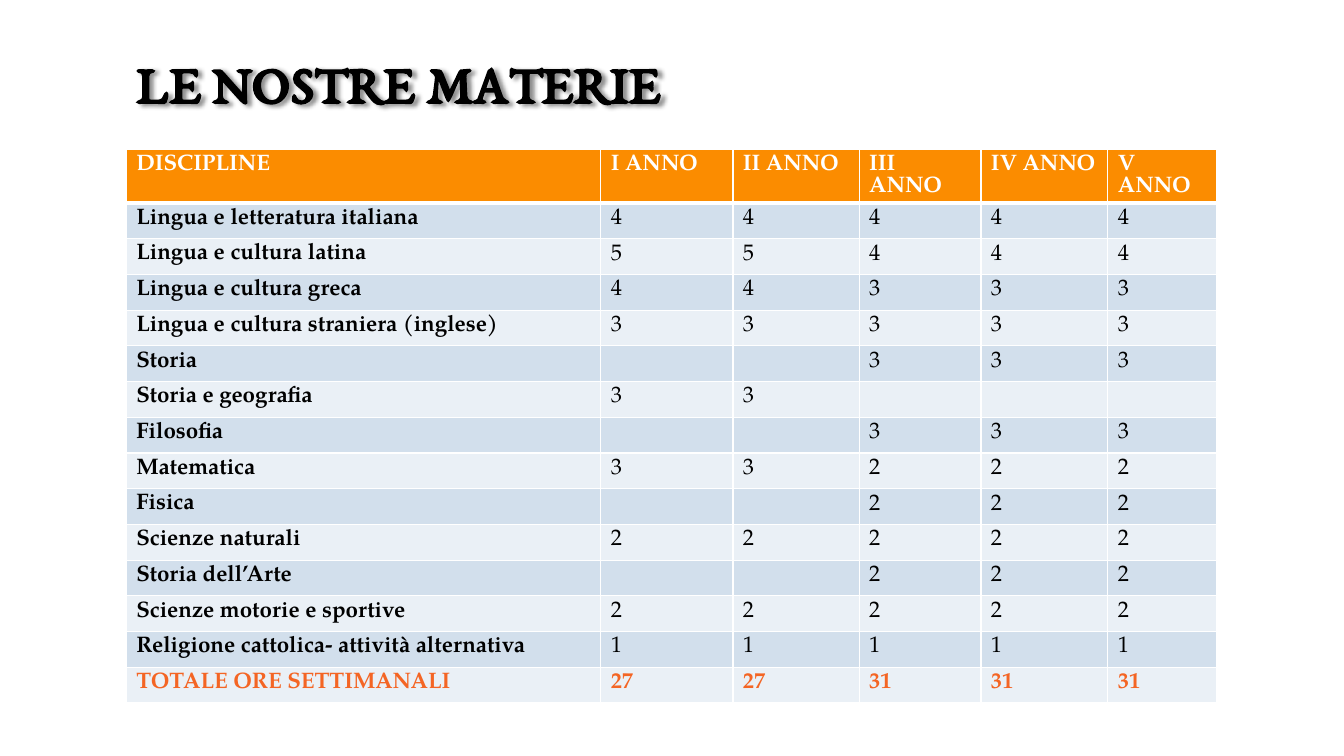
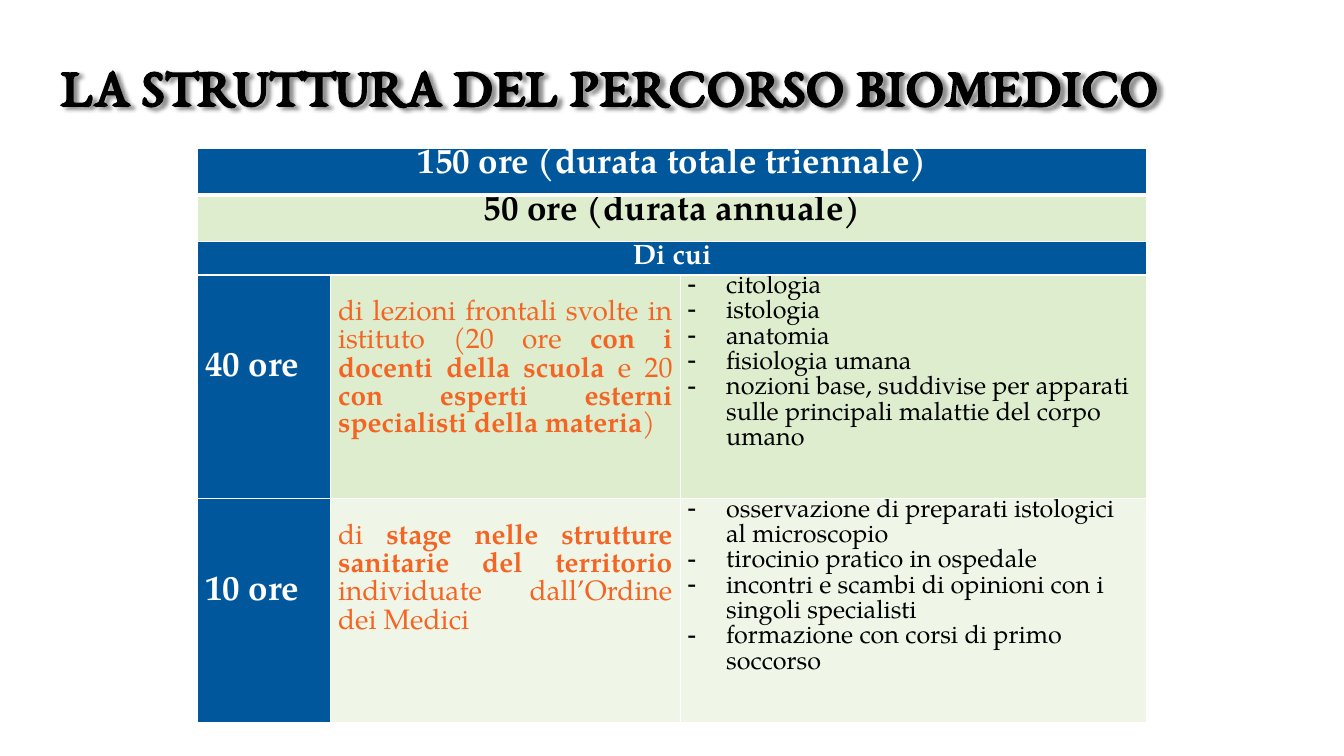
from lxml import etree
from pptx import Presentation
from pptx import util as u
from pptx.dml.color import RGBColor
from pptx.enum import text as t
from pptx.oxml import parse_xml
from pptx.oxml.ns import nsdecls, qn

# Shared colours and fonts
WHITE, BLACK, ACCENT = "FFFFFF", "000000", "F46524"
ORANGE, BLUE = "FB8C00", "01579B"
BLUE_BANDS = ("EAF0F6", "D2DFEC")
GREEN, PALE_GREEN = "DDEDCE", "EFF6E8"
TITLE_FONT, BODY_FONT = "EB Garamond", "TeX Gyre Pagella"
TITLE_SHADOW = (
    f'<a:effectLst {nsdecls("a")}><a:outerShdw blurRad="38100" dist="38100" dir="2700000">'
    '<a:srgbClr val="000000"><a:alpha val="43000"/></a:srgbClr></a:outerShdw></a:effectLst>')


def write(frame, paragraphs, size=16, color=BLACK, bold=False, font=BODY_FONT,
          align=t.PP_ALIGN.LEFT, spacing=None, dash=False):
    """Fill a frame; a paragraph is a string or a list of (text, bold) parts."""
    for i, parts in enumerate(paragraphs):
        paragraph = frame.paragraphs[0] if i == 0 else frame.add_paragraph()
        paragraph.alignment = align
        if spacing:
            paragraph.line_spacing = spacing
        if dash:
            props = paragraph._p.get_or_add_pPr()
            props.set("marL", str(u.Cm(0.97)))
            props.set("indent", str(u.Cm(-1.07)))
            etree.SubElement(props, qn("a:buChar")).set("char", "-")
        for words, strong in [(parts, bold)] if isinstance(parts, str) else parts:
            run = paragraph.add_run()
            run.text = words
            run.font.name, run.font.size, run.font.bold = font, u.Pt(size), strong
            run.font.color.rgb = RGBColor.from_string(color)


def paint(cell, fill, top=1, bottom=1):
    """Give a cell its fill and white borders, with widths in points."""
    cell.fill.solid()
    cell.fill.fore_color.rgb = RGBColor.from_string(fill)
    for i, (side, width) in enumerate((("L", 1), ("R", 1), ("T", top), ("B", bottom))):
        cell._tc.tcPr.insert(i, parse_xml(
            f'<a:ln{side} {nsdecls("a")} w="{u.Pt(width)}"><a:solidFill>'
            f'<a:srgbClr val="{WHITE}"/></a:solidFill></a:ln{side}>'))


prs = Presentation()
prs.slide_width, prs.slide_height = u.Cm(33.87), u.Cm(19.05)

# Both slides: title and empty table grid
pages = [
    ("LE NOSTRE MATERIE", (3.18, 1.24, 27.5, 1.8), (3.18, 3.76),
     [11.96, 3.33, 3.18, 3.07, 3.2, 2.74], [1.35] + [0.9] * 14),
    ("LA STRUTTURA DEL PERCORSO BIOMEDICO", (1.27, 0.97, 31.32, 2.49), (4.98, 3.73),
     [3.35, 8.81, 11.76], [1.18, 1.18, 0.84, 5.64, 5.64]),
]
grids = []
for heading, title_box, corner, widths, heights in pages:
    slide = prs.slides.add_slide(prs.slide_layouts[5])
    title = slide.shapes.title
    title.left, title.top, title.width, title.height = map(u.Cm, title_box)
    title.text_frame.auto_size = t.MSO_AUTO_SIZE.NONE
    title.text_frame.vertical_anchor = t.MSO_ANCHOR.MIDDLE
    write(title.text_frame, [heading], size=40, bold=True, font=TITLE_FONT, spacing=0.9)
    title._element.spPr.append(parse_xml(TITLE_SHADOW))

    grid = slide.shapes.add_table(len(heights), len(widths), *map(u.Cm, corner),
                                  u.Cm(sum(widths)), u.Cm(sum(heights))).table
    grid.horz_banding = False
    for column, width in zip(grid.columns, widths):
        column.width = u.Cm(width)
    for row, height in zip(grid.rows, heights):
        row.height = u.Cm(height)
    grids.append(grid)
timetable, course = grids

# Weekly hours: subject, hours in years I-II, hours in years III-V
subjects = [
    ("Lingua e letteratura italiana", 4, 4),
    ("Lingua e cultura latina", 5, 4),
    ("Lingua e cultura greca", 4, 3),
    ("Lingua e cultura straniera (inglese)", 3, 3),
    ("Storia", 0, 3),
    ("Storia e geografia", 3, 0),
    ("Filosofia", 0, 3),
    ("Matematica", 3, 2),
    ("Fisica", 0, 2),
    ("Scienze naturali", 2, 2),
    ("Storia dell’Arte", 0, 2),
    ("Scienze motorie e sportive", 2, 2),
    ("Religione cattolica- attività alternativa", 1, 1),
]
subjects.append(("TOTALE ORE SETTIMANALI", sum(s[1] for s in subjects),
                 sum(s[2] for s in subjects)))
lines = [["DISCIPLINE"] + [f"{year} ANNO" for year in ("I", "II", "III", "IV", "V")]]
lines += [[name] + [early] * 2 + [late] * 3 for name, early, late in subjects]
last = len(lines) - 1
for r, line in enumerate(lines):
    for c, value in enumerate(line):
        cell = timetable.cell(r, c)
        paint(cell, BLUE_BANDS[r % 2] if r else ORANGE,
              top=3 if r == 1 else 1, bottom=1 if r else 3)
        if value:
            write(cell.text_frame, [str(value)], bold=c == 0 or r in (0, last),
                  color={0: WHITE, last: ACCENT}.get(r, BLACK))
        else:
            # Small end mark keeps the empty cell from stretching its row
            mark = etree.SubElement(cell.text_frame.paragraphs[0]._p, qn("a:endParaRPr"))
            mark.set("sz", "1200")

# Course structure: fills and margins
course_fills = [[BLUE] * 3, [GREEN] * 3, [BLUE] * 3,
                [BLUE, GREEN, GREEN], [BLUE, PALE_GREEN, PALE_GREEN]]
for r, fills in enumerate(course_fills):
    for c, fill in enumerate(fills):
        cell = course.cell(r, c)
        cell.margin_left = cell.margin_right = u.Cm(0.19)
        cell.margin_top = cell.margin_bottom = 0
        paint(cell, fill, top=3 if r == 1 else 1, bottom=1 if r else 3)

# Full-width bands
bands = [("150 ore (durata totale triennale)", 25, WHITE),
         ("50 ore (durata annuale)", 25, BLACK),
         ("Di cui", 20, WHITE)]
for r, (band, size, color) in enumerate(bands):
    cell = course.cell(r, 0)
    cell.merge(course.cell(r, 2))
    write(cell.text_frame, [band], size=size, color=color, bold=True,
          align=t.PP_ALIGN.CENTER)
course.cell(2, 0).vertical_anchor = t.MSO_ANCHOR.MIDDLE

# Hours, activity and topics
activities = [
    ("40 ore",
     [("di lezioni frontali svolte in istituto (20 ore ", False),
      ("con i docenti della scuola", True), (" e 20 ", False),
      ("con esperti esterni specialisti della materia", True), (")", False)],
     ["citologia", "istologia", "anatomia", "fisiologia umana",
      "nozioni base, suddivise per apparati sulle principali malattie del corpo umano"]),
    ("10 ore",
     [("di ", False), ("stage nelle strutture sanitarie del territorio", True),
      (" individuate dall’Ordine dei Medici", False)],
     ["osservazione di preparati istologici al microscopio",
      "tirocinio pratico in ospedale",
      "incontri e scambi di opinioni con i singoli specialisti",
      "formazione con corsi di primo soccorso"]),
]
for r, (hours, activity, topics) in enumerate(activities, start=len(bands)):
    hours_cell, activity_cell, topics_cell = (course.cell(r, c) for c in range(3))
    hours_cell.margin_top, activity_cell.margin_top = u.Cm(1.92), u.Cm(0.64)
    write(hours_cell.text_frame, [hours], size=25, color=WHITE, bold=True)
    write(activity_cell.text_frame, [activity], size=20, color=ACCENT,
          align=t.PP_ALIGN.JUSTIFY)
    write(topics_cell.text_frame, topics, size=18, dash=True)

prs.save("out.pptx")
